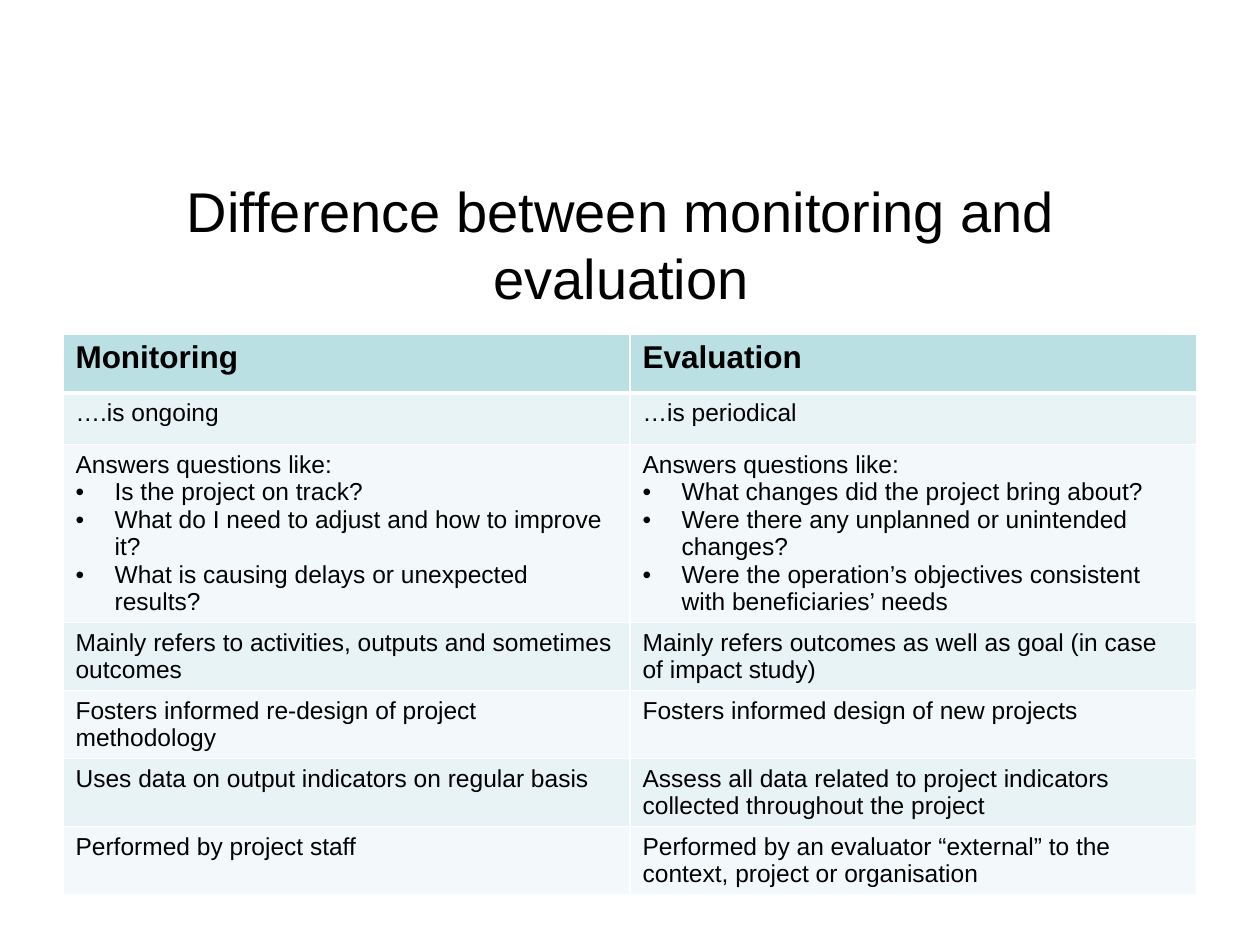
from typing import NamedTuple

from lxml import etree
from pptx import Presentation
from pptx.dml.color import RGBColor
from pptx.enum.text import MSO_ANCHOR, PP_ALIGN
from pptx.oxml.ns import qn
from pptx.util import Inches, Pt

CENTER = PP_ALIGN.CENTER
MIDDLE = MSO_ANCHOR.MIDDLE
TOP = MSO_ANCHOR.TOP

FONT = "Arial"
BLACK = RGBColor(0x00, 0x00, 0x00)
WHITE = RGBColor(0xFF, 0xFF, 0xFF)
HEADER_FILL = RGBColor(0xBB, 0xE0, 0xE3)
BAND_FILLS = (RGBColor(0xE7, 0xF3, 0xF4), RGBColor(0xF3, 0xF9, 0xFA))
BULLET_INDENT = Inches(0.31)


class Entry(NamedTuple):
    """Cell text: a lead line and the bullets under it."""
    lead: str
    bullets: tuple[str, ...] = ()


class Comparison(NamedTuple):
    height: float
    monitoring: Entry
    evaluation: Entry


COMPARISONS = [
    Comparison(0.47, Entry("Monitoring"), Entry("Evaluation")),
    Comparison(0.41, Entry("….is ongoing"), Entry("…is periodical")),
    Comparison(
        1.41,
        Entry("Answers questions like:", (
            "Is the project on track?",
            "What do I need to adjust and how to improve it?",
            "What is causing delays or unexpected results?",
        )),
        Entry("Answers questions like:", (
            "What changes did the project bring about?",
            "Were there any unplanned or unintended changes?",
            "Were the operation’s objectives consistent with beneficiaries’ needs",
        )),
    ),
    Comparison(
        0.54,
        Entry("Mainly refers to activities, outputs and sometimes outcomes"),
        Entry("Mainly refers outcomes as well as goal (in case of impact study)"),
    ),
    Comparison(
        0.54,
        Entry("Fosters informed re-design of project methodology"),
        Entry("Fosters informed design of new projects"),
    ),
    Comparison(
        0.54,
        Entry("Uses data on output indicators on regular basis"),
        Entry("Assess all data related to project indicators collected throughout the project"),
    ),
    Comparison(
        0.54,
        Entry("Performed by project staff"),
        Entry("Performed by an evaluator “external” to the context, project or organisation"),
    ),
]


def add_run(paragraph, text: str, size: int, bold: bool = False) -> None:
    run = paragraph.add_run()
    run.text = text
    run.font.name = FONT
    run.font.size = Pt(size)
    run.font.bold = bold
    run.font.color.rgb = BLACK


def add_bullet(paragraph) -> None:
    properties = paragraph._p.get_or_add_pPr()
    properties.set("marL", str(BULLET_INDENT))
    properties.set("indent", str(-BULLET_INDENT))
    etree.SubElement(properties, qn("a:buFont"), typeface=FONT)
    etree.SubElement(properties, qn("a:buChar"), char="•")


def set_borders(cell, top: int, bottom: int) -> None:
    properties = cell._tc.get_or_add_tcPr()
    for side, points in (("L", 1), ("R", 1), ("T", top), ("B", bottom)):
        line = etree.SubElement(properties, qn(f"a:ln{side}"), w=str(Pt(points)))
        fill = etree.SubElement(line, qn("a:solidFill"))
        etree.SubElement(fill, qn("a:srgbClr"), val=str(WHITE))


def fill_cell(cell, entry: Entry, row: int) -> None:
    is_header = row == 0
    size = 18 if is_header else 14
    # Borders come before the fill in the cell properties
    set_borders(cell, top=3 if row == 1 else 1, bottom=3 if is_header else 1)
    cell.fill.solid()
    cell.fill.fore_color.rgb = HEADER_FILL if is_header else BAND_FILLS[(row - 1) % 2]
    cell.vertical_anchor = TOP

    frame = cell.text_frame
    add_run(frame.paragraphs[0], entry.lead, size, is_header)
    for question in entry.bullets:
        paragraph = frame.add_paragraph()
        add_bullet(paragraph)
        add_run(paragraph, question, size)


def add_title(slide, text: str) -> None:
    title = slide.shapes.title
    title.left, title.top = Inches(0.43), Inches(1.31)
    title.width, title.height = Inches(9), Inches(1.25)
    frame = title.text_frame
    frame.word_wrap = True
    frame.vertical_anchor = MIDDLE
    paragraph = frame.paragraphs[0]
    paragraph.alignment = CENTER
    add_run(paragraph, text, 32)


def add_comparison_table(slide, comparisons: list[Comparison]) -> None:
    height = sum(comparison.height for comparison in comparisons)
    table = slide.shapes.add_table(
        len(comparisons), 2, Inches(0.5), Inches(2.65), Inches(9), Inches(height)
    ).table
    for row, comparison in enumerate(comparisons):
        table.rows[row].height = Inches(comparison.height)
        fill_cell(table.cell(row, 0), comparison.monitoring, row)
        fill_cell(table.cell(row, 1), comparison.evaluation, row)


def main() -> None:
    presentation = Presentation()
    presentation.slide_width = Inches(10)
    presentation.slide_height = Inches(7.5)
    title_only = presentation.slide_layouts[5]
    slide = presentation.slides.add_slide(title_only)

    add_title(slide, "Difference between monitoring and evaluation")
    add_comparison_table(slide, COMPARISONS)
    presentation.save("out.pptx")


if __name__ == "__main__":
    main()
